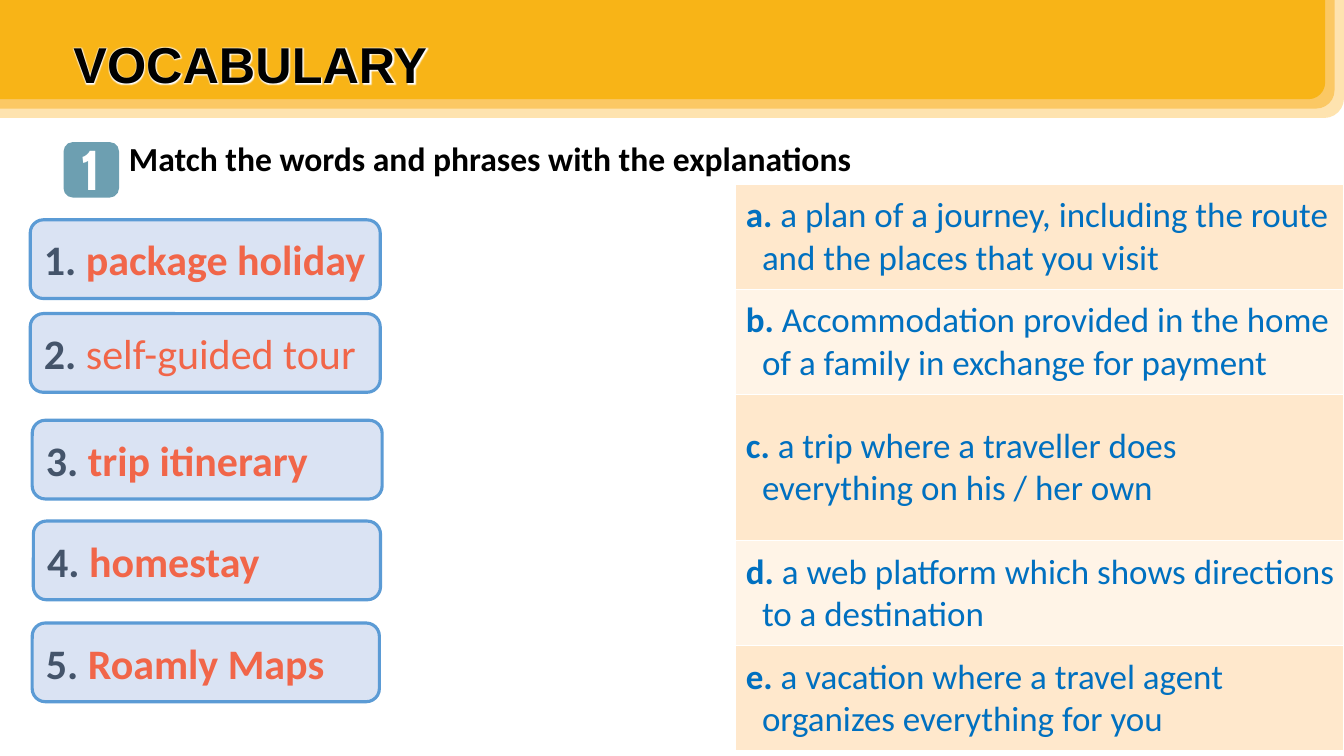
"""Build a vocabulary matching slide with five phrases and five explanations."""
from lxml.etree import SubElement
from pptx import Presentation
from pptx.dml.color import RGBColor
from pptx.enum.shapes import MSO_SHAPE
from pptx.enum.text import MSO_ANCHOR, PP_ALIGN
from pptx.oxml import parse_xml
from pptx.oxml.ns import nsdecls, qn
from pptx.util import Pt

BLACK = RGBColor(0x00, 0x00, 0x00)
WHITE = RGBColor(0xFF, 0xFF, 0xFF)
TEAL = RGBColor(0x6D, 0x9F, 0xB1)
BLUE = RGBColor(0x00, 0x70, 0xC0)
SLATE = RGBColor(0x44, 0x54, 0x6A)
CORAL = RGBColor(0xF1, 0x66, 0x49)
CARD_FILL = RGBColor(0xDA, 0xE3, 0xF3)
CARD_LINE = RGBColor(0x5B, 0x9B, 0xD5)
ROW_FILLS = (RGBColor(0xFF, 0xE8, 0xCC), RGBColor(0xFF, 0xF4, 0xE7))
BANNER_FILLS = (RGBColor(0xFE, 0xE3, 0xAF), RGBColor(0xFB, 0xC8, 0x64),
                RGBColor(0xF8, 0xB4, 0x17))

TITLE = "VOCABULARY"
TASK_NUMBER = "1"
TASK = "Match the words and phrases with the explanations"
PHRASES = [
    ("package holiday", True, 21.6, 157, 250),
    ("self-guided tour", False, 21.6, 224, 250),
    ("trip itinerary", True, 23, 300.2, 250),
    ("homestay", True, 23.8, 372.2, 248),
    ("Roamly Maps", True, 23, 445, 248),
]
EXPLANATIONS = [
    ("a plan of a journey, including the route and the places that you visit", 75),
    ("Accommodation provided in the home of a family in exchange for payment", 75),
    ("a trip where a traveller does everything on his / her own", 104.5),
    ("a web platform which shows directions to a destination", 75),
    ("a vacation where a travel agent organizes everything for you", 75),
]
CARD_HEIGHT = 56.2
BANNER_WIDTH, BANNER_HEIGHT, BANNER_STEP = 960, 85, 6.7
TABLE_LEFT, TABLE_TOP, TABLE_WIDTH = 525.6, 131.8, 434.4
HANGING = Pt(11.5)

presentation = Presentation()
presentation.slide_width, presentation.slide_height = Pt(960), Pt(540)
slide = presentation.slides.add_slide(presentation.slide_layouts[6])


def set_font(font, size, color, name="Calibri", bold=True):
    font.size, font.name, font.bold = Pt(size), name, bold
    font.color.rgb = color


def add_block(kind, left, top, width, height, fill):
    block = slide.shapes.add_shape(kind, Pt(left), Pt(top), Pt(width), Pt(height))
    block.shadow.inherit = False
    block.fill.solid()
    block.fill.fore_color.rgb = fill
    block.line.fill.background()
    return block


def add_label(text, left, top, width, height, size, color, name="Calibri"):
    label = slide.shapes.add_textbox(Pt(left), Pt(top), Pt(width), Pt(height))
    label.text_frame.word_wrap = True
    paragraph = label.text_frame.paragraphs[0]
    paragraph.text = text
    set_font(paragraph.font, size, color, name)
    return paragraph


def add_runs(paragraph, marker, text, text_bold):
    for words, bold in ((marker, True), (text, text_bold)):
        run = paragraph.add_run()
        run.text = words
        run.font.bold = bold
    return paragraph.runs


def add_borders(cell):
    properties = cell._tc.get_or_add_tcPr()
    for side in ("lnL", "lnR", "lnT", "lnB"):
        border = SubElement(properties, qn(f"a:{side}"), w=str(Pt(1)))
        fill = SubElement(border, qn("a:solidFill"))
        SubElement(fill, qn("a:srgbClr"), val=str(WHITE))


for layer, banner_fill in enumerate(BANNER_FILLS):
    inset = layer * BANNER_STEP
    banner = add_block(MSO_SHAPE.ROUND_1_RECTANGLE, 0, -0.7,
                       BANNER_WIDTH - inset, BANNER_HEIGHT - inset, banner_fill)
    banner._element.spPr.find(qn("a:xfrm")).set("flipV", "1")

add_label(TASK, 85, 95, 852, 36, 24, BLACK)
add_block(MSO_SHAPE.ROUNDED_RECTANGLE, 45.4, 101.5, 39.6, 39.6, TEAL)
number = add_label(TASK_NUMBER, 49.7, 92.2, 31, 55.4, 40, WHITE, "Cabin")
number.alignment = PP_ALIGN.CENTER

title = add_label(TITLE, 45.4, 20.2, 325.4, 51, 36, BLACK, "Arial").runs[0]
set_font(title.font, 36, BLACK, "Arial")
title.font._element.find(qn("a:solidFill")).addnext(parse_xml(
    f'<a:effectLst {nsdecls("a")}><a:glow rad="{Pt(3)}">'
    f'<a:srgbClr val="{WHITE}"/></a:glow></a:effectLst>'))

table = slide.shapes.add_table(
    len(EXPLANATIONS), 1, Pt(TABLE_LEFT), Pt(TABLE_TOP), Pt(TABLE_WIDTH),
    Pt(sum(height for _, height in EXPLANATIONS))).table
table.first_row = table.horz_banding = False
for index, (explanation, height) in enumerate(EXPLANATIONS):
    table.rows[index].height = Pt(height)
    cell = table.cell(index, 0)
    add_borders(cell)
    cell.fill.solid()
    cell.fill.fore_color.rgb = ROW_FILLS[index % 2]
    cell.vertical_anchor = MSO_ANCHOR.MIDDLE
    cell.margin_left = cell.margin_right = Pt(7.2)
    cell.margin_top = cell.margin_bottom = Pt(7.2)
    paragraph = cell.text_frame.paragraphs[0]
    indents = paragraph._p.get_or_add_pPr()
    indents.set("marL", str(HANGING))
    indents.set("indent", str(-HANGING))
    set_font(paragraph.font, 25, BLUE, bold=None)
    add_runs(paragraph, f"{'abcde'[index]}.", f" {explanation}", False)

for index, (phrase, bold, left, top, width) in enumerate(PHRASES, 1):
    card = add_block(MSO_SHAPE.ROUNDED_RECTANGLE, left, top, width, CARD_HEIGHT, CARD_FILL)
    card.line.color.rgb = CARD_LINE
    card.line.width = Pt(2.25)
    card.text_frame.word_wrap = True
    card.text_frame.vertical_anchor = MSO_ANCHOR.MIDDLE
    paragraph = card.text_frame.paragraphs[0]
    paragraph.alignment = PP_ALIGN.LEFT
    set_font(paragraph.font, 30, SLATE, bold=None)
    marker_run, phrase_run = add_runs(paragraph, f"{index}. ", phrase, bold)
    marker_run.font.color.rgb = SLATE
    phrase_run.font.color.rgb = CORAL

presentation.save("out.pptx")
